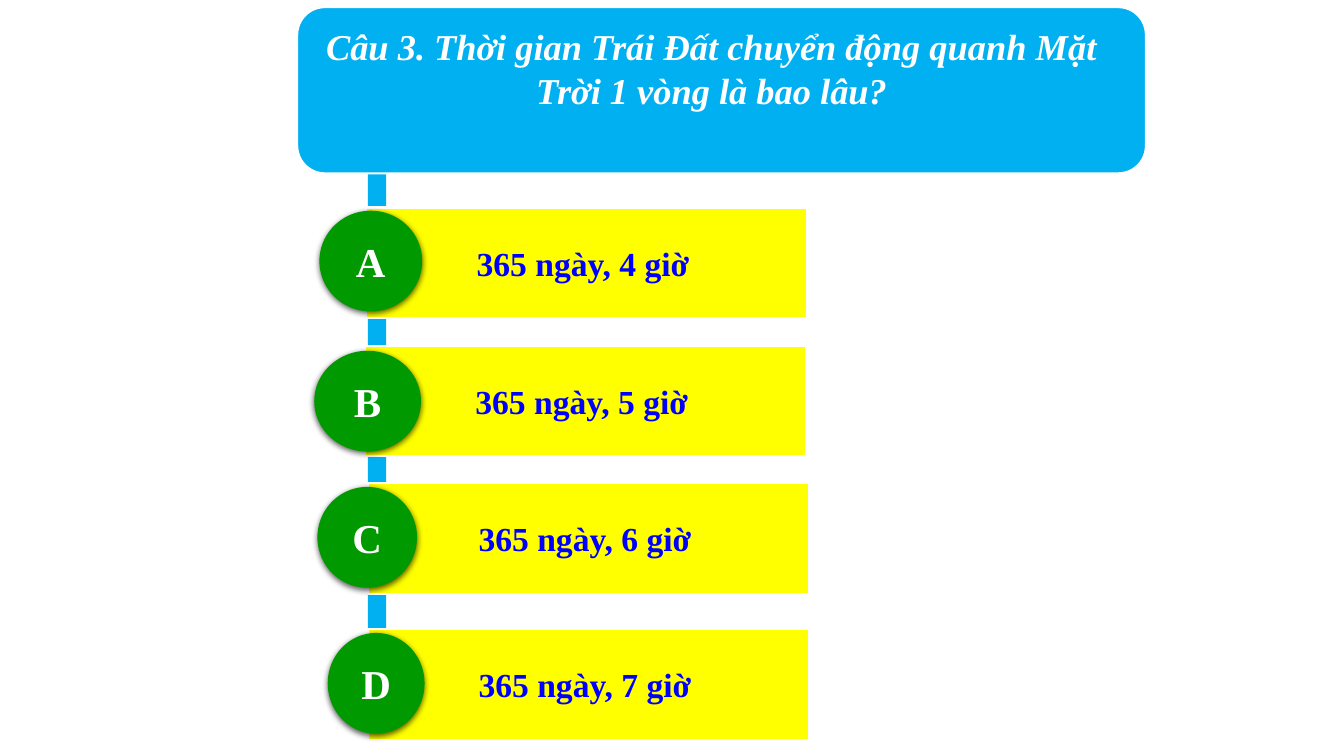
from dataclasses import dataclass

from lxml import etree
from pptx import Presentation
from pptx.dml.color import RGBColor
from pptx.enum.shapes import MSO_SHAPE
from pptx.enum.text import MSO_ANCHOR, MSO_AUTO_SIZE, PP_ALIGN
from pptx.oxml.ns import qn
from pptx.shapes.autoshape import Shape
from pptx.slide import Slide
from pptx.text.text import TextFrame
from pptx.util import Cm, Pt

RECTANGLE = MSO_SHAPE.RECTANGLE
ROUNDED = MSO_SHAPE.ROUNDED_RECTANGLE
OVAL = MSO_SHAPE.OVAL
TOP, MIDDLE = MSO_ANCHOR.TOP, MSO_ANCHOR.MIDDLE
CENTER, JUSTIFY = PP_ALIGN.CENTER, PP_ALIGN.JUSTIFY
NO_AUTOFIT = MSO_AUTO_SIZE.NONE
TITLE_ONLY = 5


@dataclass(frozen=True)
class Theme:
    font: str = "Times New Roman"
    blue: str = "00B0F0"
    yellow: str = "FFFF00"
    green: str = "009900"
    white: str = "FFFFFF"
    answer_ink: str = "0000FF"
    shadow: str = "000000"
    question_size: float = 26
    answer_size: float = 24
    letter_size: float = 29.3
    outline: float = 1.5


@dataclass(frozen=True)
class Box:
    left: float
    top: float
    width: float
    height: float


@dataclass(frozen=True)
class Answer:
    letter: str
    text: str
    bar: Box
    badge: Box


THEME = Theme()
QUESTION = "Câu 3. Thời gian Trái Đất chuyển động quanh Mặt Trời 1 vòng là bao lâu?"
STEM = Box(9.27, 2.72, 0.46, 15.29)
BANNER = Box(7.49, 0.18, 21.39, 4.19)
QUESTION_BOX = Box(7.49, 0.48, 20.9, 2.49)
BAR_WIDTH, BAR_HEIGHT, BAR_INDENT = 11.13, 2.79, 2.79
BADGE_HEIGHT = 2.54


def answer(letter: str, hours: int, bar_left: float, bar_top: float,
           badge_left: float, badge_top: float, badge_width: float) -> Answer:
    return Answer(letter, f"365 ngày, {hours} giờ",
                  Box(bar_left, bar_top, BAR_WIDTH, BAR_HEIGHT),
                  Box(badge_left, badge_top, badge_width, BADGE_HEIGHT))


ANSWERS = (
    answer("A", 4, 9.22, 5.23, 8.05, 5.31, 2.59),
    answer("B", 5, 9.19, 8.71, 7.92, 8.84, 2.69),
    answer("C", 6, 9.27, 12.17, 8.0, 12.27, 2.51),
    answer("D", 7, 9.27, 15.85, 8.26, 15.95, 2.44),
)


def add_block(slide: Slide, kind: MSO_SHAPE, box: Box, fill: str,
              outlined: bool = False) -> Shape:
    block = slide.shapes.add_shape(kind, Cm(box.left), Cm(box.top),
                                   Cm(box.width), Cm(box.height))
    block.fill.solid()
    block.fill.fore_color.rgb = RGBColor.from_string(fill)
    if outlined:
        block.line.color.rgb = RGBColor.from_string(THEME.white)
        block.line.width = Pt(THEME.outline)
    else:
        block.line.fill.background()
    block.shadow.inherit = False
    return block


def write(frame: TextFrame, text: str, size: float, color: str,
          align: PP_ALIGN, anchor: MSO_ANCHOR, italic: bool = False) -> None:
    frame.text = text
    frame.word_wrap = True
    frame.auto_size = NO_AUTOFIT
    frame.vertical_anchor = anchor
    paragraph = frame.paragraphs[0]
    paragraph.alignment = align
    paragraph.font.name = THEME.font
    paragraph.font.size = Pt(size)
    paragraph.font.bold = True
    paragraph.font.italic = italic
    paragraph.font.color.rgb = RGBColor.from_string(color)


def cast_shadow(block: Shape) -> None:
    effects = block.element.spPr.find(qn("a:effectLst"))
    shadow = etree.SubElement(effects, qn("a:outerShdw"), blurRad=str(Pt(4.5)),
                              dist=str(Pt(1.5)), dir="5400000", rotWithShape="0")
    color = etree.SubElement(shadow, qn("a:srgbClr"), val=THEME.shadow)
    etree.SubElement(color, qn("a:alpha"), val="63000")


def add_question(slide: Slide) -> None:
    add_block(slide, ROUNDED, BANNER, THEME.blue, outlined=True)
    question = slide.shapes.title
    question.left, question.top = Cm(QUESTION_BOX.left), Cm(QUESTION_BOX.top)
    question.width, question.height = Cm(QUESTION_BOX.width), Cm(QUESTION_BOX.height)
    write(question.text_frame, QUESTION, THEME.question_size, THEME.white,
          CENTER, TOP, italic=True)
    question.element.getparent().append(question.element)


def add_answer(slide: Slide, option: Answer) -> None:
    bar = add_block(slide, RECTANGLE, option.bar, THEME.yellow, outlined=True)
    bar.text_frame.margin_left = Cm(BAR_INDENT)
    write(bar.text_frame, option.text, THEME.answer_size, THEME.answer_ink,
          JUSTIFY, MIDDLE)
    badge = add_block(slide, OVAL, option.badge, THEME.green)
    cast_shadow(badge)
    write(badge.text_frame, option.letter, THEME.letter_size, THEME.white,
          CENTER, MIDDLE)


def main() -> None:
    deck = Presentation()
    deck.slide_width, deck.slide_height = Cm(33.87), Cm(19.05)
    slide = deck.slides.add_slide(deck.slide_layouts[TITLE_ONLY])
    add_block(slide, RECTANGLE, STEM, THEME.blue)
    add_question(slide)
    for option in ANSWERS:
        add_answer(slide, option)
    deck.save("out.pptx")


if __name__ == "__main__":
    main()
